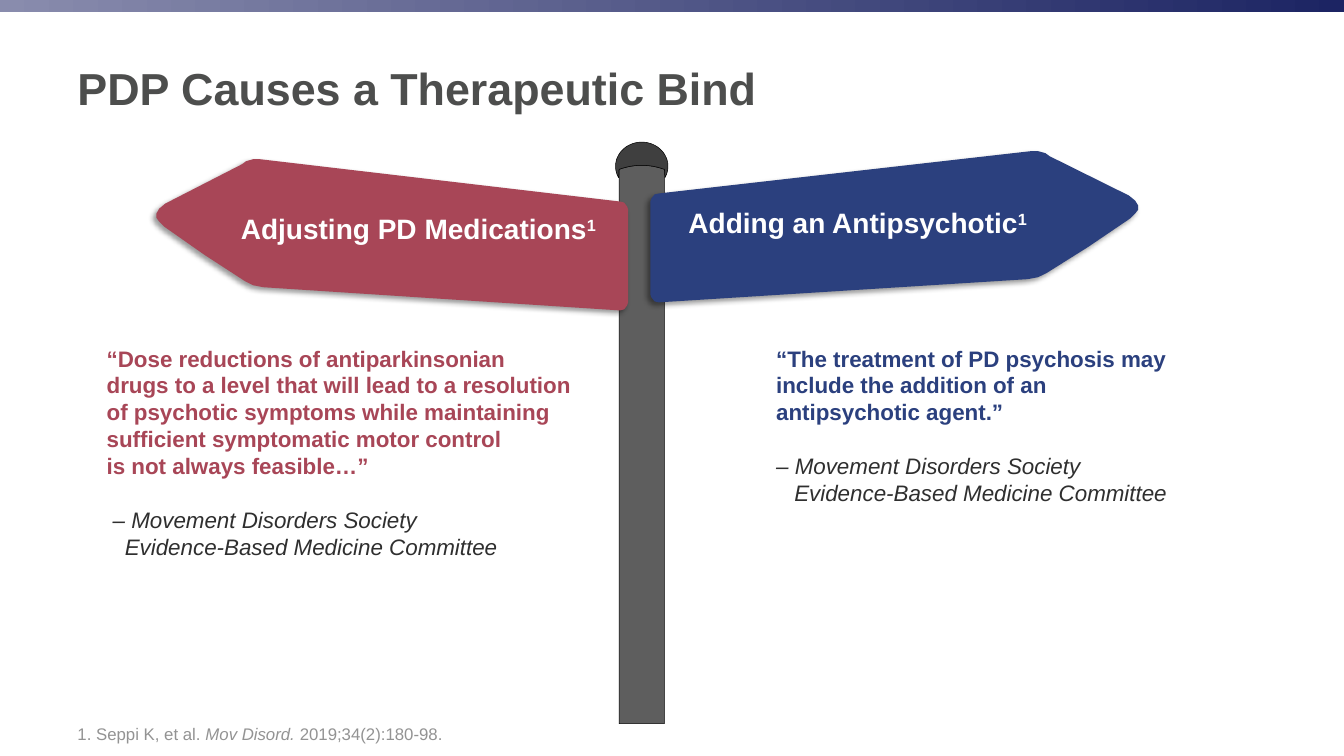
import math
from dataclasses import dataclass

from lxml import etree
from pptx import Presentation
from pptx.dml.color import RGBColor
from pptx.enum.shapes import MSO_SHAPE
from pptx.enum.text import MSO_ANCHOR
from pptx.oxml.ns import qn
from pptx.util import Inches, Pt

RECTANGLE = MSO_SHAPE.RECTANGLE
TOP, MIDDLE, BOTTOM = MSO_ANCHOR.TOP, MSO_ANCHOR.MIDDLE, MSO_ANCHOR.BOTTOM
RED, BLUE, WHITE, INK = "A84657", "2B407E", "FFFFFF", "2F2F2F"

Point = tuple[float, float]
Box = tuple[float, float, float, float]

# Sign outline: distance from the edge at the post, and depth below the top
SIGN_OUTLINE: list[Point] = [
    (0.08, 0.42), (3.65, 0), (3.72, 0), (3.79, 0.02), (3.83, 0.05),
    (4.59, 0.44), (4.65, 0.49), (4.68, 0.54), (4.68, 0.58), (4.65, 0.62),
    (4.6, 0.67), (4.2, 0.95), (3.8, 1.21), (3.72, 1.25), (3.62, 1.27),
    (0.08, 1.5), (0.04, 1.49), (0.01, 1.45), (0, 1.42), (0, 0.5),
    (0.01, 0.47), (0.04, 0.43),
]


@dataclass
class Sign:
    label: str
    color: str
    edge: float
    top: float
    stretch: float  # horizontal factor; negative points left
    label_box: Box


@dataclass
class Quote:
    lines: list[str]
    color: str
    box: Box
    margin: float
    hanging: float


SIGNS = [
    Sign("Adjusting PD Medications", RED, 6.23, 1.58, -1, (2.29, 2.05, 3.91, 0.71)),
    Sign("Adding an Antipsychotic", BLUE, 6.45, 1.5, 1.034, (6.73, 1.99, 4.34, 0.44)),
]
QUOTES = [
    Quote(["“Dose reductions of antiparkinsonian",
           "drugs to a level that will lead to a resolution of psychotic symptoms "
           "while maintaining sufficient symptomatic motor control",
           "is not always feasible…”"], RED, (0.96, 3.37, 4.87, 2.26), 0.18, 0.12),
    Quote(["“The treatment of PD psychosis may include the addition of an "
           "antipsychotic agent.”"], BLUE, (7.6, 3.37, 4.17, 1.72), 0.18, 0.18),
]
ATTRIBUTION = ["– Movement Disorders Society", "Evidence-Based Medicine Committee"]


def rgb(color: str) -> RGBColor:
    return RGBColor.from_string(color)


def add_run(p, text: str, size: float, color: str, **formats):
    r = p.add_run()
    r.text = text
    r.font.color.rgb = rgb(color)
    for name, value in {"name": "Arial", "size": Pt(size), **formats}.items():
        setattr(r.font, name, value)
    return r


def add_text_box(s, box: Box, anchor=TOP):
    tf = s.shapes.add_textbox(*map(Inches, box)).text_frame
    tf.word_wrap = True
    tf.vertical_anchor = anchor
    return tf


def add_outline(s, points: list[Point], color: str):
    start, *rest = [(Inches(x), Inches(y)) for x, y in points]
    builder = s.shapes.build_freeform(*start, scale=1.0)
    builder.add_line_segments(rest, close=True)
    sp = builder.convert_to_shape()
    sp.shadow.inherit = False
    sp.fill.solid()
    sp.fill.fore_color.rgb = rgb(color)
    sp.line.fill.background()
    return sp


def add_shadow(sp) -> None:
    effects = sp._element.spPr.find(qn("a:effectLst"))
    shadow = etree.SubElement(effects, qn("a:outerShdw"), blurRad=str(Pt(4)),
                              dist=str(Pt(3)), dir=str(135 * 60000), rotWithShape="0")
    color = etree.SubElement(shadow, qn("a:srgbClr"), val="000000")
    etree.SubElement(color, qn("a:alpha"), val="40000")


def add_post(s) -> None:
    """Draw the post with its arched top and the round cap above it."""
    center, half, top, bottom = 6.365, 0.225, 1.64, 7.18
    steps = [i / 6 for i in range(-6, 7)]
    arch = [(center + half * t, top + 0.04 * t * t) for t in steps]
    post = arch + [(center + half, bottom), (center - half, bottom)]
    angles = [math.radians(a) for a in range(152, 389, 4)]
    dome = [(center + 0.26 * math.cos(a), 1.65 + 0.24 * math.sin(a)) for a in angles]
    for points, color in ((post, "5E5E5E"), (dome + arch[::-1], "3F3F3F")):
        sp = add_outline(s, points, color)
        sp.line.color.rgb = rgb("000000")
        sp.line.width = Pt(0.38)


def add_sign(s, sign: Sign) -> None:
    add_shadow(add_outline(s, [(sign.edge + sign.stretch * x, sign.top + y)
                               for x, y in SIGN_OUTLINE], sign.color))
    p = add_text_box(s, sign.label_box).paragraphs[0]
    add_run(p, sign.label, 20, WHITE, bold=True)
    note = add_run(p, "1", 20, WHITE, bold=True)
    note.font._element.set("baseline", "30000")


def add_quote(s, quote: Quote) -> None:
    tf = add_text_box(s, quote.box)
    for i, line in enumerate(quote.lines):
        p = tf.add_paragraph() if i else tf.paragraphs[0]
        add_run(p, line, 16, quote.color, bold=True)
    p = tf.add_paragraph()
    p.space_before = Pt(19.2)
    pPr = p._p.get_or_add_pPr()
    pPr.set("marL", str(Inches(quote.margin)))
    pPr.set("indent", str(-Inches(quote.hanging)))
    for i, line in enumerate(ATTRIBUTION):
        if i:
            p.add_line_break()
        add_run(p, line, 16, INK, italic=True)


def add_top_band(s) -> None:
    sp = s.shapes.add_shape(RECTANGLE, 0, 0, Inches(13.33), Inches(0.12))
    sp.shadow.inherit = False
    sp.line.fill.background()
    sp.fill.gradient()
    sp.fill.gradient_angle = 0
    for stop, color in zip(sp.fill.gradient_stops, ("898CAD", "1C2463")):
        stop.color.rgb = rgb(color)


def main() -> None:
    prs = Presentation()
    prs.slide_width, prs.slide_height = Inches(13.33), Inches(7.5)
    s = prs.slides.add_slide(prs.slide_layouts[6])

    title = add_text_box(s, (0.67, 0.22, 11.75, 1.3), MIDDLE).paragraphs[0]
    add_run(title, "PDP Causes a Therapeutic Bind", 32, "4D4E4D", bold=True)
    source = add_text_box(s, (0.67, 6.95, 11.75, 0.48), BOTTOM).paragraphs[0]
    for text, italic in (("1. Seppi K, et al. ", False), ("Mov Disord. ", True),
                         ("2019;34(2):180-98.", False)):
        add_run(source, text, 12, "939393", italic=italic)

    add_post(s)
    for sign, quote in zip(SIGNS, QUOTES):
        add_sign(s, sign)
        add_quote(s, quote)
    add_top_band(s)
    prs.save("out.pptx")


if __name__ == "__main__":
    main()
